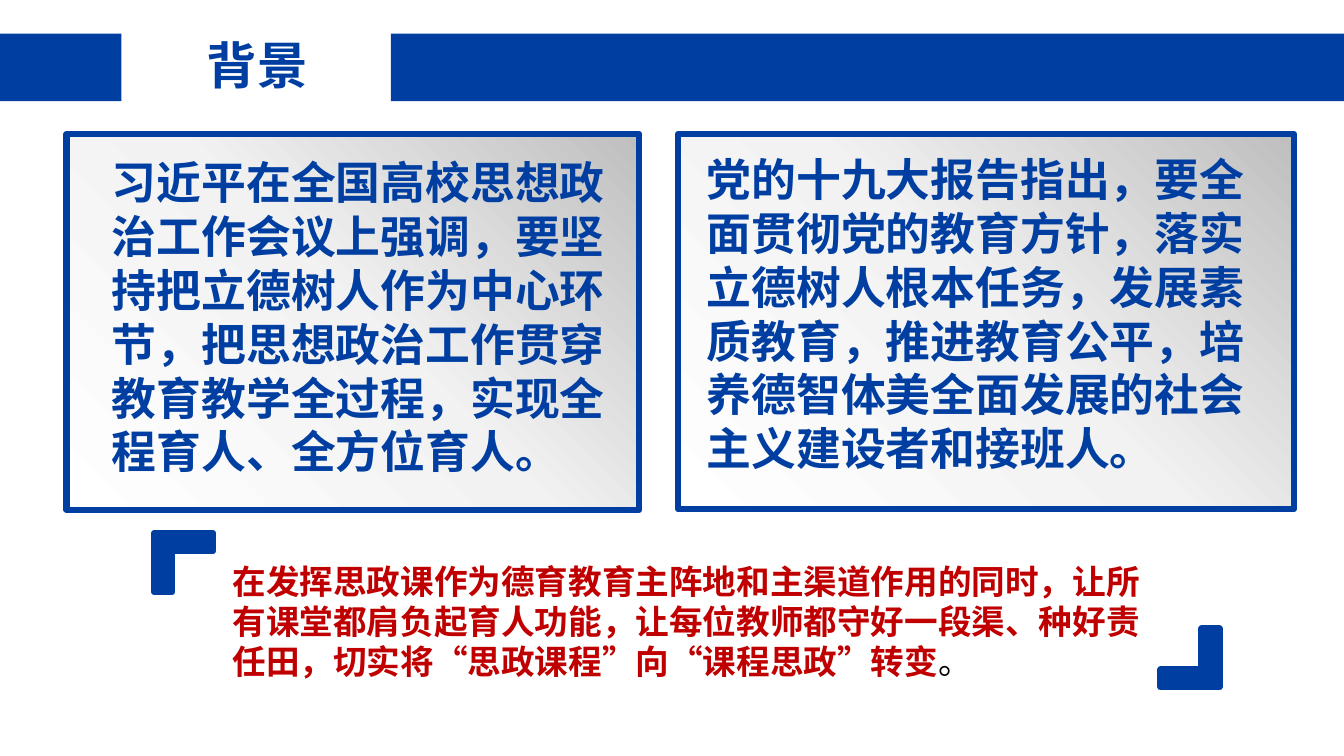
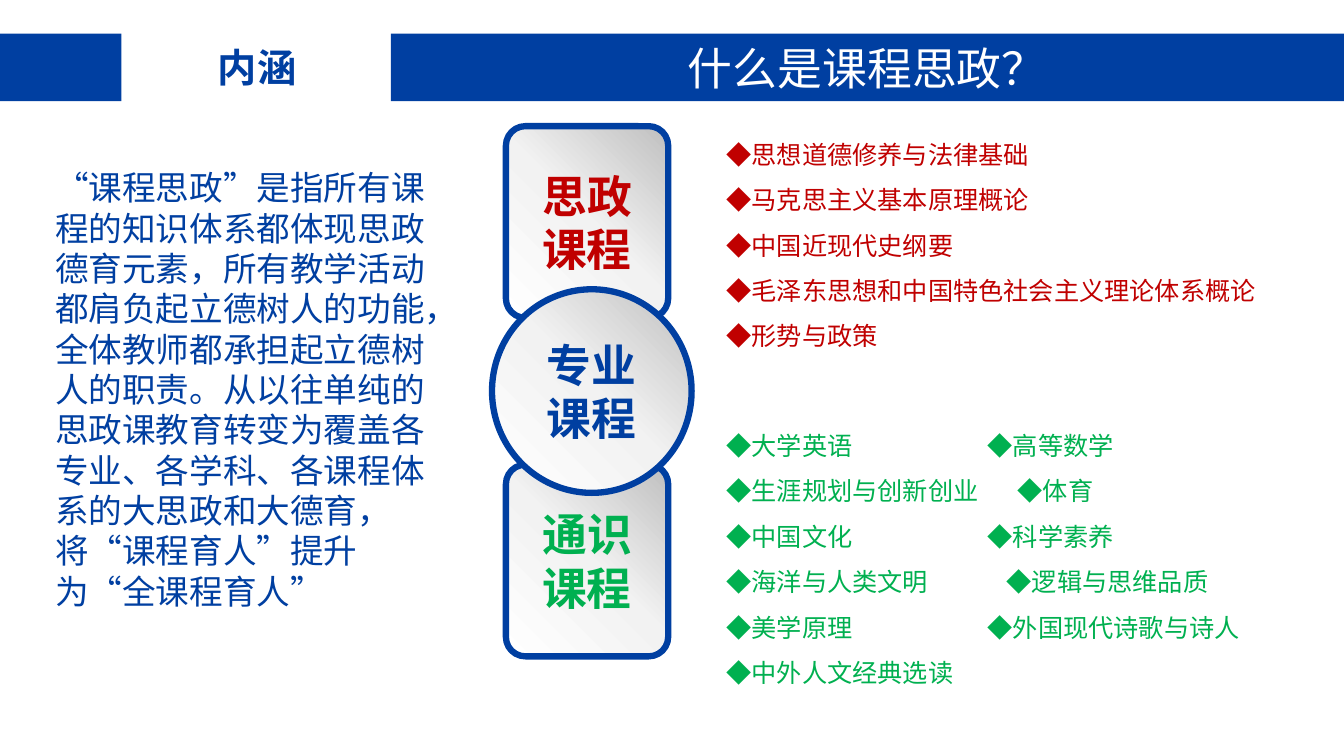
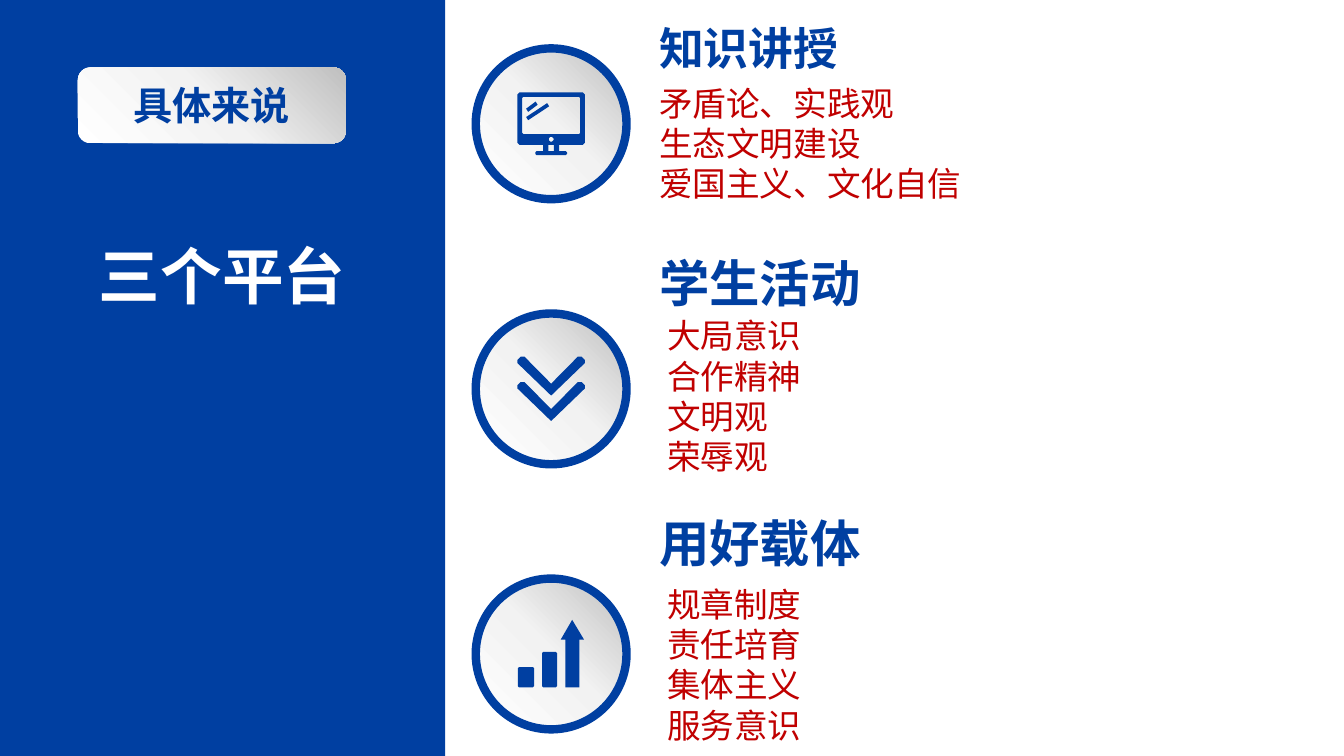
from copy import deepcopy

from lxml.etree import SubElement
from pptx import Presentation
from pptx.dml.color import RGBColor
from pptx.enum.lang import MSO_LANGUAGE_ID
from pptx.enum.shapes import MSO_SHAPE
from pptx.enum.text import MSO_ANCHOR, MSO_AUTO_SIZE, PP_ALIGN
from pptx.oxml.ns import qn
from pptx.util import Cm, Pt

BLUE = RGBColor(0x00, 0x3F, 0xA1)
RED = RGBColor(0xC0, 0x00, 0x00)
GREEN = RGBColor(0x00, 0xB0, 0x50)
WHITE = RGBColor(0xFF, 0xFF, 0xFF)
BLACK = RGBColor(0x00, 0x00, 0x00)
PALE = RGBColor(0xF2, 0xF2, 0xF2)
GREY = RGBColor(0xBF, 0xBF, 0xBF)
SHEEN = [(0, WHITE), (0.51, PALE), (1, GREY)]
CJK, ARIAL, ROBOTO = "Noto Sans CJK SC", "Arial", "Roboto Condensed"
WIDTH, HEIGHT = 33.87, 19.05


def box(left, top, right, bottom, cut=0.03):
    """Return the corners of a rectangle with cut corners."""
    return [(left + cut, top), (right - cut, top), (right, top + cut),
            (right, bottom - cut), (right - cut, bottom),
            (left + cut, bottom), (left, bottom - cut), (left, top + cut)]


def chevron(dy):
    """Return a downward chevron moved down by dy."""
    half = [(-0.85, -0.65), (-0.85, -0.73), (-0.77, -0.81), (-0.67, -0.81)]
    mirrored = [(-x, y) for x, y in reversed(half)]
    points = half + [(0, -0.13)] + mirrored + [(0, 0.17)]
    return [(x, y + dy) for x, y in points]


MONITOR = [
    box(-0.85, -0.79, 0.85, 0.53, 0.05),
    box(-0.73, -0.68, 0.73, 0.26),
    box(-0.06, 0.33, 0.06, 0.45, 0.04),
    box(-0.2, 0.53, -0.07, 0.69, 0),
    box(0.07, 0.53, 0.2, 0.69, 0),
    box(-0.4, 0.69, 0.4, 0.79),
    [(-0.1, -0.52), (-0.05, -0.44), (-0.58, -0.09), (-0.63, -0.17)],
    [(-0.39, -0.56), (-0.34, -0.48), (-0.58, -0.3), (-0.63, -0.38)],
]
CHEVRONS = [chevron(0), chevron(0.64)]
GROWTH = [
    box(-0.84, 0.33, -0.43, 0.84),
    box(-0.23, -0.05, 0.15, 0.84),
    [(0.53, -0.86), (0.83, -0.36), (0.71, -0.36), (0.71, 0.84),
     (0.36, 0.84), (0.36, -0.36), (0.24, -0.36)],
]


class Deck:
    """Holds the shared style and the current slide."""

    def __init__(self):
        self.prs = Presentation()
        self.prs.slide_width, self.prs.slide_height = Cm(WIDTH), Cm(HEIGHT)
        self.s = None

    def new_slide(self):
        """Start a title-only slide."""
        self.s = self.prs.slides.add_slide(self.prs.slide_layouts[5])

    def set_text(self, tf, lines, size, color, font=CJK, bold=False,
                 align=PP_ALIGN.LEFT, spacing=None, tabs=()):
        """Fill a text frame with evenly styled paragraphs."""
        tf.word_wrap = True
        for i, line in enumerate(lines):
            p = tf.add_paragraph() if i else tf.paragraphs[0]
            p.text = line
            p.alignment = align
            if spacing:
                p.line_spacing = spacing
            if "\t" in line:
                stops = SubElement(p._p.get_or_add_pPr(), qn("a:tabLst"))
                SubElement(stops, qn("a:tab"), pos=str(Cm(tabs[i])), algn="l")
            f = p.font
            f.name, f.size, f.bold = font, Pt(size), bold
            f.color.rgb = color
            f.language_id = MSO_LANGUAGE_ID.SIMPLIFIED_CHINESE
            SubElement(f._rPr, qn("a:ea"), typeface=CJK)

    def title(self, text, at, size, color, font=ARIAL, align=PP_ALIGN.CENTER):
        """Place the title placeholder in front of the shapes so far."""
        sp = self.s.shapes.title
        self.s.shapes._spTree.append(sp._element)
        sp.left, sp.top, sp.width, sp.height = map(Cm, at)
        tf = sp.text_frame
        tf.auto_size = MSO_AUTO_SIZE.NONE
        tf.vertical_anchor = MSO_ANCHOR.TOP
        self.set_text(tf, [text], size, color, font, True, align)

    def text(self, at, lines, size, color, inset=None, **style):
        """Add a text box and return its text frame."""
        tf = self.s.shapes.add_textbox(*map(Cm, at)).text_frame
        if inset:
            tf.margin_left = tf.margin_right = Cm(inset[0])
            tf.margin_top = tf.margin_bottom = Cm(inset[1])
        self.set_text(tf, lines, size, color, **style)
        return tf

    def outline(self, sp, line):
        """Set a blue border of the given width, or none."""
        sp.shadow.inherit = False
        if line:
            sp.line.color.rgb = BLUE
            sp.line.width = Pt(line)
        else:
            sp.line.fill.background()

    def block(self, at):
        """Add a plain blue rectangle."""
        sp = self.s.shapes.add_shape(MSO_SHAPE.RECTANGLE, *map(Cm, at))
        sp.fill.solid()
        sp.fill.fore_color.rgb = BLUE
        self.outline(sp, 0)
        return sp

    def panel(self, kind, at, line=4.5, round_by=None):
        """Add a shape with the grey sheen."""
        sp = self.s.shapes.add_shape(kind, *map(Cm, at))
        if round_by:
            sp.adjustments[0] = round_by
        sp.fill.gradient()
        sp.fill.gradient_angle = 45
        stops = sp._element.spPr.find(qn("a:gradFill")).find(qn("a:gsLst"))
        stops.insert(1, deepcopy(stops[0]))
        for stop, (position, color) in zip(sp.fill.gradient_stops, SHEEN):
            stop.position = position
            stop.color.rgb = color
        self.outline(sp, line)
        return sp

    def label(self, sp, text, size, color, font=ROBOTO, bold=True):
        """Put centred text in a shape."""
        sp.text_frame.vertical_anchor = MSO_ANCHOR.MIDDLE
        self.set_text(sp.text_frame, [text], size, color, font, bold,
                      PP_ALIGN.CENTER)

    def freeform(self, x, y, contours, line=0):
        """Add one blue outline whose contours are relative to x, y."""
        fb = None
        for contour in contours:
            points = [(Cm(x + dx), Cm(y + dy)) for dx, dy in contour]
            if fb is None:
                fb = self.s.shapes.build_freeform(*points[0])
            else:
                fb.move_to(*points[0])
            fb.add_line_segments(points[1:], close=True)
        sp = fb.convert_to_shape()
        sp.fill.solid()
        sp.fill.fore_color.rgb = BLUE
        self.outline(sp, line)

    def bracket(self, x, y, sign):
        """Add a corner mark that opens right and down, or left and up."""
        long, thick = 1.48 * sign, 0.45 * sign
        self.freeform(x, y, [[(0, 0), (long, 0), (long, thick),
                              (thick, thick), (thick, long), (0, long)]], 4.5)

    def header(self, title, size, top):
        """Add the blue bands with the title between them."""
        self.block((0, 0.85, 3.06, 1.7))
        band = self.block((9.85, 0.85, WIDTH - 9.85, 1.7))
        self.title(title, (2.76, top, 7.44, 1.8), size, BLUE)
        return band


def background(d):
    """Build the background slide."""
    d.new_slide()
    d.header("背景", 36, 0.74)
    quotes = [
        ((1.68, 3.38, 14.43, 9.47), (2.49, 3.76, 13.26, 8.53),
         "习近平在全国高校思想政治工作会议上强调，要坚持把立德树人作为中心环节，"
         "把思想政治工作贯穿教育教学全过程，实现全程育人、全方位育人。"),
        ((17.09, 3.38, 15.52, 9.45), (17.48, 3.68, 14.76, 8.53),
         "党的十九大报告指出，要全面贯彻党的教育方针，落实立德树人根本任务，"
         "发展素质教育，推进教育公平，培养德智体美全面发展的社会主义建设者和接班人。"),
    ]
    for frame, at, quote in quotes:
        d.panel(MSO_SHAPE.RECTANGLE, frame)
        d.text(at, [quote], 32, BLUE, inset=(0.33, 0.15), bold=True)
    d.bracket(3.89, 13.44, 1)
    d.bracket(30.73, 17.32, -1)
    tf = d.text((5.61, 14, 23.72, 3.33), [
        "在发挥思政课作为德育教育主阵地和主渠道作用的同时，让所有课堂都肩负起育人功能，"
        "让每位教师都守好一段渠、种好责任田，切实将“思政课程”向“课程思政”转变"],
        24, RED, bold=True)
    r = tf.paragraphs[0].add_run()
    r.text = "。"
    r.font.bold = False
    r.font.color.rgb = BLACK


def meaning(d):
    """Build the slide on what the courses cover."""
    d.new_slide()
    band = d.header("内涵", 28, 0.97)
    d.label(band, "什么是课程思政？", 32, WHITE, ARIAL, False)
    d.text((1.14, 4.09, 9.86, 11.53), [
        "“课程思政”是指所有课程的知识体系都体现思政德育元素，所有教学活动都肩负起立德树人的功能，"
        "全体教师都承担起立德树人的职责。从以往单纯的思政课教育转变为覆盖各专业、各学科、"
        "各课程体系的大思政和大德育，将“课程育人”提升为“全课程育人”"], 24, BLUE)
    rounded = MSO_SHAPE.ROUNDED_RECTANGLE
    for kind, at, text, color, round_by in [
            (rounded, (12.75, 3.18, 4.09, 4.83), "思政课程", RED, 0.12),
            (rounded, (12.75, 11.71, 4.09, 4.83), "通识课程", GREEN, 0.12),
            (MSO_SHAPE.OVAL, (12.4, 7.29, 5.03, 5.13), "专业课程", BLUE, None)]:
        d.label(d.panel(kind, at, round_by=round_by), text, 32, color)
    d.text((18.06, 3, 14.22, 6.02), [
        "◆思想道德修养与法律基础", "◆马克思主义基本原理概论", "◆中国近现代史纲要",
        "◆毛泽东思想和中国特色社会主义理论体系概论", "◆形势与政策"],
        18, RED, spacing=1.5)
    d.text((18.06, 10.34, 14.22, 7.19), [
        "◆大学英语\t◆高等数学", "◆生涯规划与创新创业\t◆体育", "◆中国文化\t◆科学素养",
        "◆海洋与人类文明\t◆逻辑与思维品质", "◆美学原理\t◆外国现代诗歌与诗人",
        "◆中外人文经典选读"],
        18, GREEN, spacing=1.5, tabs=(6.58, 7.34, 6.58, 7.06, 6.58))


def platforms(d):
    """Build the slide on the three platforms."""
    d.new_slide()
    d.block((0, 0, 11.22, HEIGHT))
    tag = d.panel(MSO_SHAPE.ROUNDED_RECTANGLE, (1.96, 1.7, 6.76, 1.91), line=0)
    d.label(tag, "具体来说", 28, BLUE)
    d.title("三个平台", (2.24, 5.87, 6.76, 2.13), 44, WHITE, ROBOTO,
            PP_ALIGN.LEFT)
    rows = [
        (MONITOR, "知识讲授", 32, 0.41, 16.36, 1.96,
         ["矛盾论、实践观", "生态文明建设", "爱国主义、文化自信"]),
        (CHEVRONS, "学生活动", 36, 6.22, 16.56, 7.82,
         ["大局意识", "合作精神", "文明观", "荣辱观"]),
        (GROWTH, "用好载体", 36, 12.78, 16.56, 14.58,
         ["规章制度", "责任培育", "集体主义", "服务意识"]),
    ]
    size = 3.8
    for i, (icon, head, pt, head_top, left, top, points) in enumerate(rows):
        y = 1.22 + 6.68 * i
        d.panel(MSO_SHAPE.OVAL, (11.99, y, size, size), line=6)
        d.freeform(11.99 + size / 2, y + size / 2, icon)
        d.text((16.36, head_top, 16.94, 1.8), [head], pt, BLUE,
               font=ROBOTO, bold=True)
        d.text((left, top, 16.94, 4.37), points, 24, RED)


def main():
    """Build and save the deck."""
    d = Deck()
    background(d)
    meaning(d)
    platforms(d)
    d.prs.save("out.pptx")


if __name__ == "__main__":
    main()
